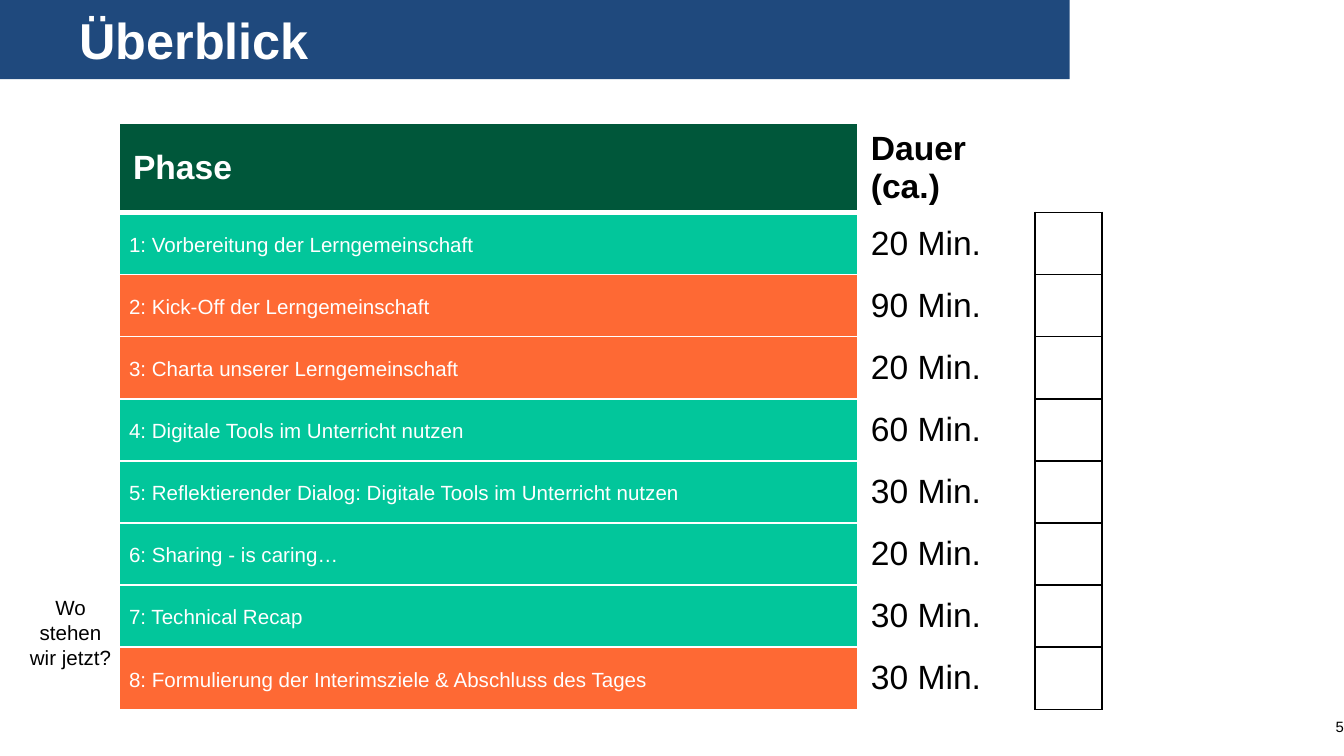
from lxml import etree
from pptx import Presentation, util as u
from pptx.dml.color import RGBColor
from pptx.enum import shapes, text
from pptx.oxml.ns import qn

COLORS = {"navy": "1F497D", "forest": "00573A", "mint": "02C69B",
          "orange": "FE6934", "white": "FFFFFF", "black": "000000"}
PHASES = [
    ("1: Vorbereitung der Lerngemeinschaft", "20 Min.", "mint"),
    ("2: Kick-Off der Lerngemeinschaft", "90 Min.", "orange"),
    ("3: Charta unserer Lerngemeinschaft", "20 Min.", "orange"),
    ("4: Digitale Tools im Unterricht nutzen", "60 Min.", "mint"),
    ("5: Reflektierender Dialog: Digitale Tools im Unterricht nutzen", "30 Min.", "mint"),
    ("6: Sharing - is caring…", "20 Min.", "mint"),
    ("7: Technical Recap", "30 Min.", "mint"),
    ("8: Formulierung der Interimsziele & Abschluss des Tages", "30 Min.", "orange"),
]


def write(frame, words, color, size, bold=False, align=text.PP_ALIGN.LEFT):
    paragraph = frame.paragraphs[0]
    paragraph.alignment = align
    run = paragraph.add_run()
    run.text = words
    for key, value in {"name": "Arial", "size": u.Pt(size), "bold": bold}.items():
        setattr(run.font, key, value)
    run.font.color.rgb = RGBColor.from_string(COLORS[color])
    return paragraph


def paint(cell, fill, borders):
    cell.fill.solid()
    cell.fill.fore_color.rgb = RGBColor.from_string(COLORS[fill])
    cell.vertical_anchor = text.MSO_ANCHOR.MIDDLE
    properties = cell._tc.get_or_add_tcPr()
    for index, side in enumerate("LRTB"):
        color, width = borders.get(side, ("white", 1))
        line = etree.Element(qn(f"a:ln{side}"), w=str(u.Pt(width)))
        solid = etree.SubElement(line, qn("a:solidFill"))
        etree.SubElement(solid, qn("a:srgbClr"), val=COLORS[color])
        properties.insert(index, line)


deck = Presentation()
deck.slide_width = u.Inches(10)
deck.slide_height = deck.slide_width * 9 // 16
slide = deck.slides.add_slide(deck.slide_layouts[6])

banner = slide.shapes.add_shape(
    shapes.MSO_SHAPE.RECTANGLE, u.Inches(-0.01), u.Inches(-0.02), u.Inches(7.97), u.Inches(0.61))
banner.shadow.inherit = False
banner.fill.solid()
banner.fill.fore_color.rgb = RGBColor.from_string(COLORS["navy"])
banner.line.fill.background()

flush = {"margin_left": 0, "margin_right": 0, "margin_top": 0, "margin_bottom": 0, "word_wrap": True}
title = slide.shapes.add_textbox(0, 0, u.Inches(7.97), u.Inches(0.59)).text_frame
page_number = slide.shapes.add_textbox(
    u.Inches(7.85), u.Inches(5.17), u.Inches(2.15), u.Inches(0.3)).text_frame
for frame, anchor in [(title, text.MSO_ANCHOR.MIDDLE), (page_number, text.MSO_ANCHOR.BOTTOM)]:
    for key, value in {**flush, "vertical_anchor": anchor}.items():
        setattr(frame, key, value)
title.margin_left = u.Inches(0.59)
write(title, "Überblick", "white", 27, True)
write(page_number, "5", "black", 8, align=text.PP_ALIGN.RIGHT)

schedule = slide.shapes.add_table(
    len(PHASES) + 1, 3, u.Inches(0.89), u.Inches(0.92), u.Inches(7.32), u.Inches(4.16)).table
schedule.first_row = schedule.horz_banding = False
for column, width in zip(schedule.columns, [5.49, 1.32, 0.5]):
    column.width = u.Inches(width)

thick, black = ("white", 3), ("black", 1)
phase_head, duration_head, check_head = schedule.rows[0].cells
paint(phase_head, "forest", {"B": thick})
paint(duration_head, "white", {"B": thick})
paint(check_head, "white", {"B": black})
for head, label, color in [(phase_head, "Phase", "white"), (duration_head, "Dauer (ca.)", "black")]:
    head.margin_top = head.margin_bottom = u.Inches(0.03)
    write(head.text_frame, label, color, 18, True)

for row, (phase, minutes, fill) in enumerate(PHASES, 1):
    phase_cell, duration_cell, check_cell = [schedule.cell(row, column) for column in range(3)]
    top = {"T": thick} if row == 1 else {}
    paint(phase_cell, fill, top)
    paint(duration_cell, "white", {**top, "R": black})
    paint(check_cell, "white", dict.fromkeys("LRTB", black))
    inset = u.Inches(0.07)
    for key, value in {"margin_left": inset, "margin_right": inset,
                       "margin_top": 0, "margin_bottom": 0}.items():
        setattr(phase_cell, key, value)
    write(phase_cell.text_frame, phase, "white", 11).line_spacing = u.Pt(14)
    write(duration_cell.text_frame, minutes, "black", 18)

position = slide.shapes.add_textbox(
    u.Inches(0.08), u.Inches(4.38), u.Inches(0.89), u.Inches(0.66)).text_frame
position.word_wrap = True
position.auto_size = text.MSO_AUTO_SIZE.SHAPE_TO_FIT_TEXT
write(position, "Wo stehen wir jetzt?", "black", 11, align=text.PP_ALIGN.CENTER)

deck.save("out.pptx")
